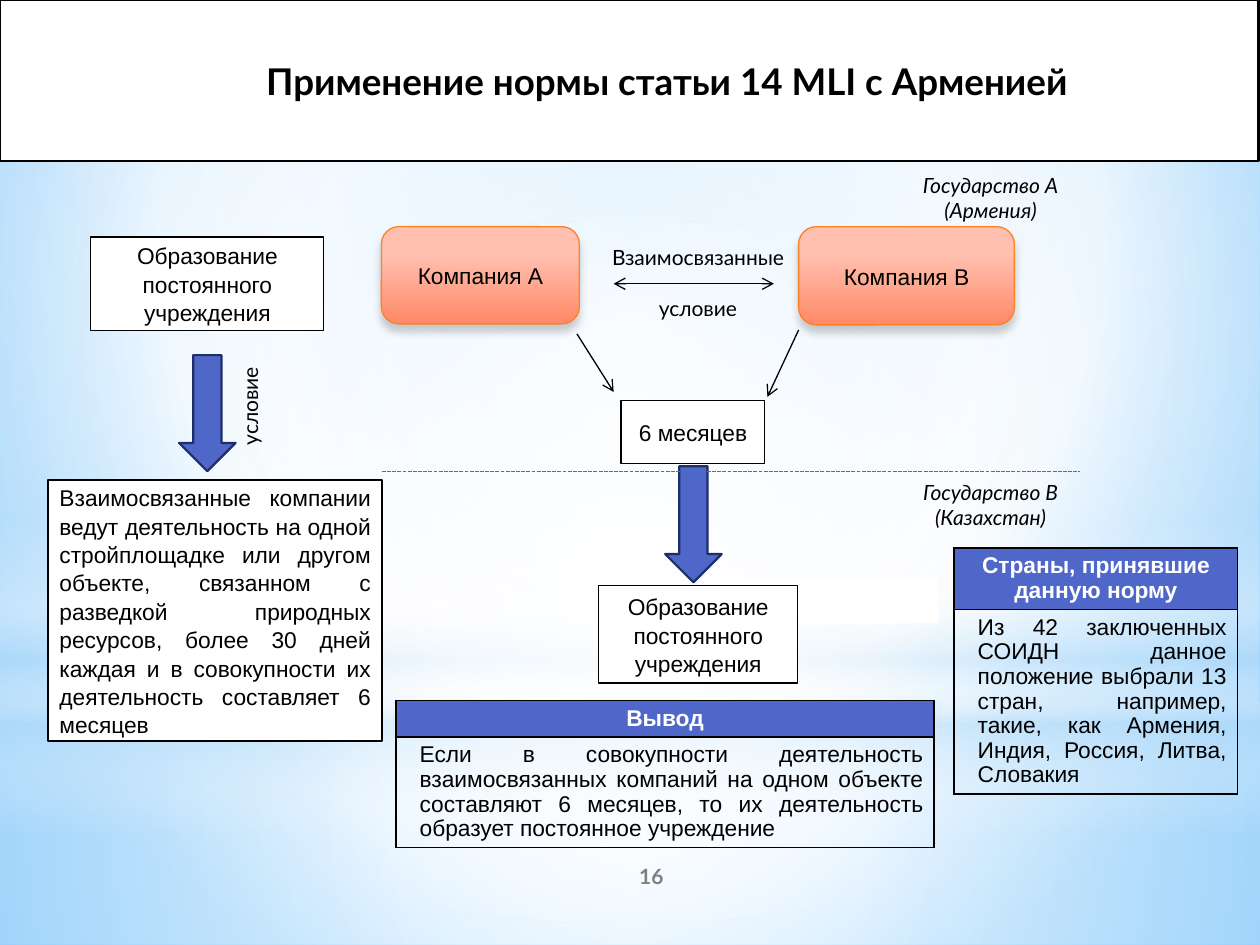
from lxml import etree
from pptx import Presentation
from pptx import util as u
from pptx.dml.color import RGBColor
from pptx.enum import dml, shapes, text
from pptx.oxml import ns

Cm, Pt = u.Cm, u.Pt
KIND = shapes.MSO_SHAPE
ALIGN = text.PP_ALIGN
HUES = {
    "black": "000000", "white": "FFFFFF", "gray": "808080",
    "blue": "4E67C8", "navy": "1F2E69", "orange": "FF8021",
    "peach": "FFC0AF", "coral": "FF8968", "pale": "B4DCFA",
    "sky": "9ED5FF", "azure": "5BB9FF",
}
INK = {name: RGBColor.from_string(code) for name, code in HUES.items()}


def grad(props, stops, rect=None):
    old = props.xpath("./a:gradFill")[0]
    new = etree.Element(ns.qn("a:gradFill"), rotWithShape="1")
    row = etree.SubElement(new, ns.qn("a:gsLst"))
    for pos, hue, alpha in stops:
        stop = etree.SubElement(row, ns.qn("a:gs"), pos=str(pos * 1000))
        tint = etree.SubElement(stop, ns.qn("a:srgbClr"), val=HUES[hue])
        if alpha < 100:
            etree.SubElement(tint, ns.qn("a:alpha"), val=str(alpha * 1000))
    if rect:
        path = etree.SubElement(new, ns.qn("a:path"), path="circle")
        sides = {side: str(val * 1000) for side, val in zip("ltrb", rect)}
        etree.SubElement(path, ns.qn("a:fillToRect"), **sides)
    else:
        etree.SubElement(new, ns.qn("a:lin"), ang="5400000", scaled="0")
    props.replace(old, new)


def box(kind, area, words="", fill=None, line=None, width=0.75, size=13,
        font="Arial", hue="black", align=ALIGN.CENTER, bold=False, slant=False):
    area = [Cm(val) for val in area]
    if kind is None:
        shape = slide.shapes.add_textbox(*area)
    else:
        shape = slide.shapes.add_shape(kind, *area)
        shape.shadow.inherit = False
        if fill:
            shape.fill.solid()
            shape.fill.fore_color.rgb = INK[fill]
        if line:
            shape.line.color.rgb = INK[line]
            shape.line.width = Pt(width)
        else:
            shape.line.fill.background()
    if words:
        frame = shape.text_frame
        frame.word_wrap = True
        frame.vertical_anchor = text.MSO_ANCHOR.MIDDLE
        frame.margin_left = frame.margin_right = Cm(0.23)
        frame.margin_top = frame.margin_bottom = Cm(0.1)
        frame.text = words
        for para in frame.paragraphs:
            para.alignment = align
            if font == "Arial":
                para.line_spacing = 1.04
            for run in para.runs:
                run.font.name, run.font.size = font, Pt(size)
                run.font.bold, run.font.italic = bold, slant
                run.font.color.rgb = INK[hue]
    return shape


deck = Presentation()
deck.slide_width, deck.slide_height = Cm(25.4), Cm(19.05)
slide = deck.slides.add_slide(deck.slide_layouts[6])

slide.background.fill.gradient()
grad(slide.element.xpath(".//p:bgPr")[0],
     [(0, "sky", 100), (60, "white", 100), (100, "azure", 100)], (20, 10, 20, 60))

mid = (50, 50, 50, 50)
for kind, area, stops, rect in [
    (KIND.RECTANGLE, (0, 14.17, 25.4, 4.88),
     [(0, "white", 91), (37, "white", 76), (100, "pale", 79)], mid),
    (KIND.RECTANGLE, (0, 0, 25.4, 14.17),
     [(0, "white", 89), (48, "white", 62), (100, "pale", 79)], mid),
    (KIND.RECTANGLE, (0, 10.46, 25.4, 6.35),
     [(0, "white", 0), (29, "white", 30), (45, "pale", 40),
      (55, "white", 26), (65, "pale", 60), (100, "white", 0)], None),
    (KIND.OVAL, (0, 4.45, 25.4, 14.17),
     [(0, "white", 100), (56, "white", 0)], mid),
]:
    layer = box(kind, area)
    layer.fill.gradient()
    grad(layer.element.spPr, stops, rect)

for name, area in [("Компания А", (7.69, 4.57, 3.99, 1.96)),
                   ("Компания В", (16.1, 4.57, 4.35, 1.98))]:
    firm = box(KIND.ROUNDED_RECTANGLE, area, name, line="orange")
    firm.adjustments[0] = 0.18
    firm.fill.gradient()
    props = firm.element.spPr
    grad(props, [(28, "peach", 100), (100, "coral", 100)])
    glow = etree.SubElement(props.find(ns.qn("a:effectLst")), ns.qn("a:outerShdw"),
                            blurRad=str(Pt(5)), dist=str(Pt(4)),
                            dir="5400000", rotWithShape="0")
    tint = etree.SubElement(glow, ns.qn("a:srgbClr"), val=HUES["black"])
    etree.SubElement(tint, ns.qn("a:alpha"), val="20000")

box(KIND.RECTANGLE, (14.58, 11.66, 4.34, 0.91), fill="white")
for area, words, align in [
    ((0.97, 9.68, 6.73, 5.26),
     "Взаимосвязанные компании ведут деятельность на одной стройплощадке или "
     "другом объекте, связанном с разведкой природных ресурсов, более 30 дней "
     "каждая и в совокупности их деятельность составляет 6 месяцев", ALIGN.JUSTIFY),
    ((1.83, 4.78, 4.7, 1.88), "Образование постоянного учреждения", ALIGN.CENTER),
    ((12.07, 11.81, 4.01, 1.96), "Образование\nпостоянного\nучреждения", ALIGN.CENTER),
    ((12.52, 8.08, 2.9, 1.27), "6 месяцев", ALIGN.CENTER),
]:
    box(KIND.RECTANGLE, area, words, "white", "black", align=align)

title = box(KIND.RECTANGLE, (0, 0, 25.37, 3.25),
            "Применение нормы статьи 14 MLI с Арменией",
            "white", "black", 1.25, 21, "Lato", bold=True)
title.text_frame.margin_left = Cm(1.75)

for area, size, rows in [
    ((19.23, 11.05, 5.72), (1.07, 3.3),
     ("Страны, принявшие\nданную норму",
      "Из 42 заключенных СОИДН данное положение выбрали 13 стран, например, "
      "такие, как Армения, Индия, Россия, Литва, Словакия")),
    ((7.98, 14.12, 10.85), (0.74, 1.85),
     ("Вывод",
      "Если в совокупности деятельность взаимосвязанных компаний на одном объекте "
      "составляют 6 месяцев, то их деятельность образует постоянное учреждение")),
]:
    left, top, width = area
    grid = slide.shapes.add_table(2, 1, Cm(left), Cm(top), Cm(width), Cm(sum(size))).table
    grid.first_row = grid.horz_banding = False
    for num, words in enumerate(rows):
        head = num == 0
        grid.rows[num].height = Cm(size[num])
        cell = grid.cell(num, 0)
        cell.margin_left = Cm(0.23 if head else 0.48)
        cell.margin_right = Cm(0.23)
        cell.margin_top = cell.margin_bottom = Cm(0.12)
        cell.text_frame.text = words
        for para in cell.text_frame.paragraphs:
            para.alignment = ALIGN.CENTER if head else ALIGN.JUSTIFY
            para.line_spacing = 0.97
            if not head:
                para.space_before = Pt(6.8)
            for run in para.runs:
                run.font.name, run.font.size, run.font.bold = "Arial", Pt(13), head
                run.font.color.rgb = INK["white" if head else "black"]
        props = cell._tc.get_or_add_tcPr()
        for side in ("lnL", "lnR", "lnT", "lnB"):
            edge = etree.SubElement(props, ns.qn("a:" + side), w=str(Pt(1)))
            solid = etree.SubElement(edge, ns.qn("a:solidFill"))
            etree.SubElement(solid, ns.qn("a:srgbClr"), val=HUES["black"])
        if head:
            cell.fill.solid()
            cell.fill.fore_color.rgb = INK["blue"]
        else:
            cell.fill.background()

for left, top in [(3.61, 7.16), (13.41, 9.4)]:
    box(KIND.DOWN_ARROW, (left, top, 1.14, 2.34), fill="blue", line="navy", width=1.25)

for ends, hue, tips in [
    ((11.63, 6.73, 12.37, 7.9), "black", ["tailEnd"]),
    ((16.1, 6.65, 15.47, 8), "black", ["tailEnd"]),
    ((12.37, 5.72, 15.6, 5.72), "black", ["headEnd", "tailEnd"]),
    ((7.7, 9.5, 21.77, 9.5), "blue", []),
]:
    wire = slide.shapes.add_connector(shapes.MSO_CONNECTOR.STRAIGHT,
                                      *[Cm(val) for val in ends])
    wire.line.color.rgb = INK[hue]
    wire.line.width = Pt(0.75)
    if not tips:
        wire.line.dash_style = dml.MSO_LINE.SQUARE_DOT
    for tip in tips:
        etree.SubElement(wire.get_or_add_ln(), ns.qn("a:" + tip), type="arrow")
    etree.SubElement(wire.element.spPr, ns.qn("a:effectLst"))

for area, words, turn, slant in [
    ((3.89, 7.87, 2.29, 0.64), "условие", 270, False),
    ((12.07, 4.78, 4.01, 0.79), "Взаимосвязанные", 0, False),
    ((12.7, 5.87, 2.74, 0.69), "условие", 0, False),
    ((18.14, 9.53, 3.66, 1.3), "Государство В (Казахстан)", 0, True),
    ((18.14, 3.33, 3.66, 1.3), "Государство А (Армения)", 0, True),
]:
    note = box(None, area, words, size=12, font="Lato", slant=slant)
    note.rotation = turn

box(None, (10.59, 17.15, 5.08, 1.02), "16", size=12, font="Lato", hue="gray", bold=True)

deck.save("out.pptx")
